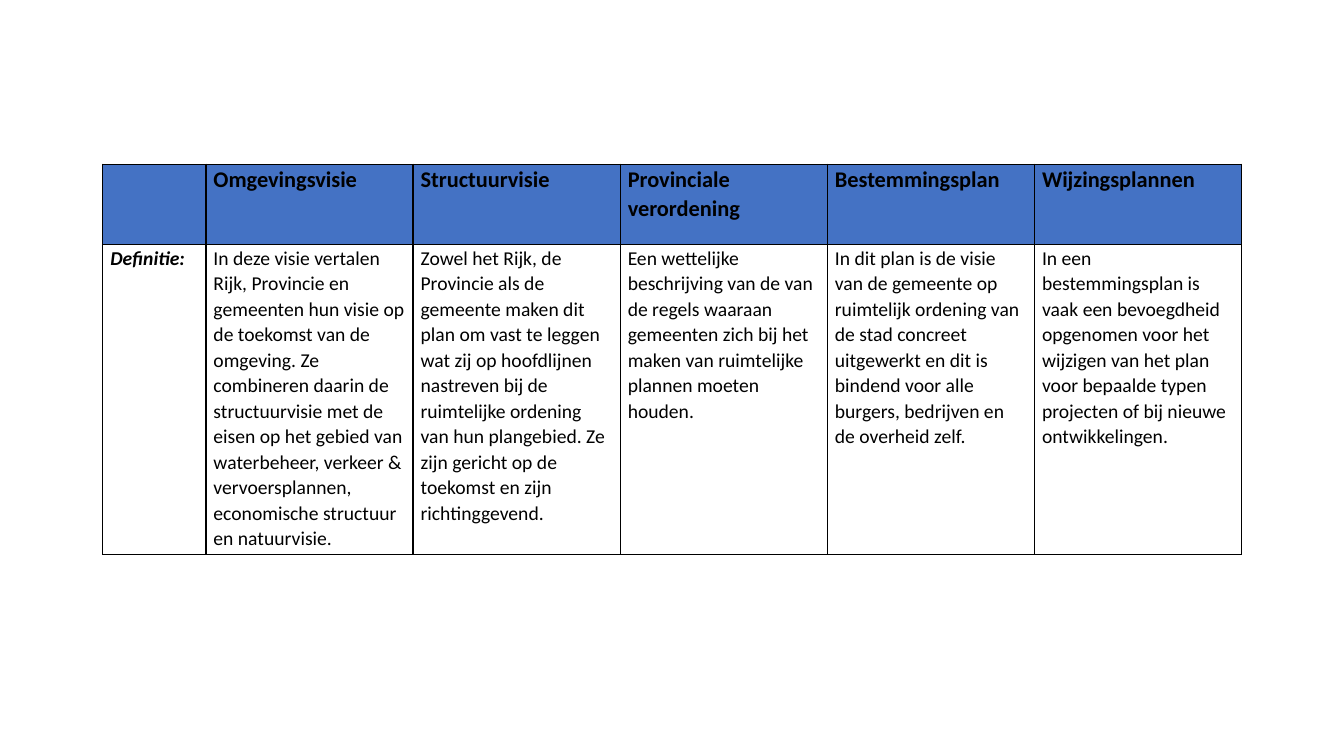
from lxml.etree import SubElement
from pptx import Presentation
from pptx.dml.color import RGBColor
from pptx.oxml.ns import qn
from pptx.util import Cm, Pt

HEADINGS = ["", "Omgevingsvisie", "Structuurvisie", "Provinciale verordening",
            "Bestemmingsplan", "Wijzingsplannen"]
DEFINITIONS = [
    "Definitie:",
    "In deze visie vertalen Rijk, Provincie en gemeenten hun visie op de toekomst "
    "van de omgeving. Ze combineren daarin de structuurvisie met de eisen op het "
    "gebied van waterbeheer, verkeer & vervoersplannen, economische structuur en "
    "natuurvisie.",
    "Zowel het Rijk, de Provincie als de gemeente maken dit plan om vast te leggen "
    "wat zij op hoofdlijnen nastreven bij de ruimtelijke ordening van hun "
    "plangebied. Ze zijn gericht op de toekomst en zijn richtinggevend.",
    "Een wettelijke beschrijving van de van de regels waaraan gemeenten zich bij "
    "het maken van ruimtelijke plannen moeten houden.",
    "In dit plan is de visie van de gemeente op ruimtelijk ordening van de stad "
    "concreet uitgewerkt en dit is bindend voor alle burgers, bedrijven en de "
    "overheid zelf.",
    "In een bestemmingsplan is vaak een bevoegdheid opgenomen voor het wijzigen van "
    "het plan voor bepaalde typen projecten of bij nieuwe ontwikkelingen.",
]


def colour(value):
    return RGBColor.from_string(value)


class PlanSlide:
    font = "Calibri"
    ink = "000000"
    heading_fill = "4472C4"
    border_width = Pt(1)

    def __init__(self, deck):
        self.slide = deck.slides.add_slide(deck.slide_layouts[6])

    def table(self, left, top, widths, heights):
        frame = self.slide.shapes.add_table(
            len(heights), len(widths), Cm(left), Cm(top),
            Cm(sum(widths)), Cm(sum(heights)))
        grid = frame.table
        grid.first_row = grid.horz_banding = False
        for column, width in zip(grid.columns, widths):
            column.width = Cm(width)
        for row, height in zip(grid.rows, heights):
            row.height = Cm(height)
        return grid

    def cell(self, cell, text, size, bold=False, italic=False, fill=None):
        cell.margin_left = cell.margin_right = Cm(0.19)
        cell.margin_top = cell.margin_bottom = 0
        self.borders(cell)
        if fill:
            cell.fill.solid()
            cell.fill.fore_color.rgb = colour(fill)
        else:
            cell.fill.background()
        if text:
            paragraph = cell.text_frame.paragraphs[0]
            paragraph.line_spacing = 1.07
            run = paragraph.add_run()
            run.text = text
            run.font.name = self.font
            run.font.size = Pt(size)
            run.font.bold = bold
            run.font.italic = italic
            run.font.color.rgb = colour(self.ink)

    def borders(self, cell):
        properties = cell._tc.get_or_add_tcPr()
        for side in ("a:lnL", "a:lnR", "a:lnT", "a:lnB"):
            line = SubElement(properties, qn(side), w=str(self.border_width))
            solid = SubElement(line, qn("a:solidFill"))
            SubElement(solid, qn("a:srgbClr"), val=self.ink)


def main():
    deck = Presentation()
    deck.slide_width, deck.slide_height = Cm(33.87), Cm(19.05)
    plans = PlanSlide(deck)
    overview = plans.table(2.59, 4.14, [2.6] + [5.22] * 5, [2.03, 7.8])
    for column, (heading, definition) in enumerate(zip(HEADINGS, DEFINITIONS)):
        is_label = column == 0
        plans.cell(overview.cell(0, column), heading, 16, bold=True,
                   fill=plans.heading_fill)
        plans.cell(overview.cell(1, column), definition, 14, bold=is_label,
                   italic=is_label)
    deck.save("out.pptx")


if __name__ == "__main__":
    main()
